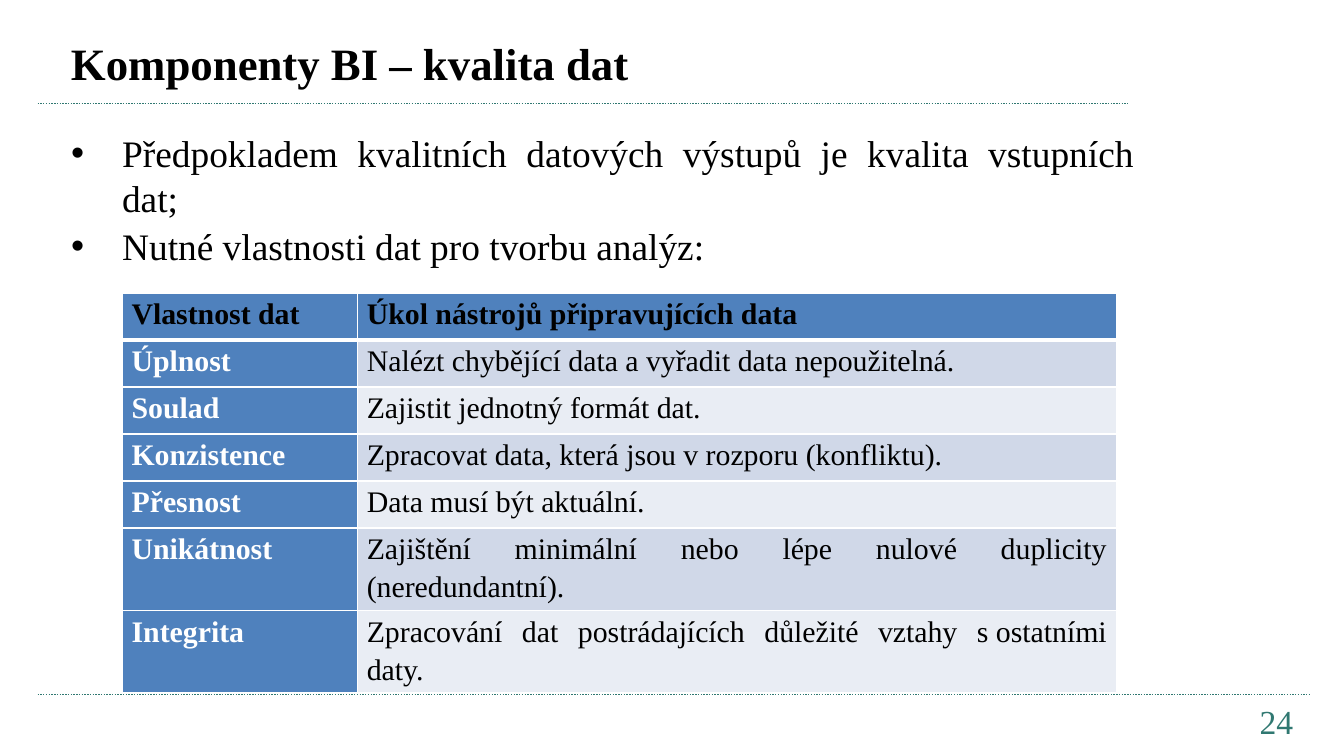
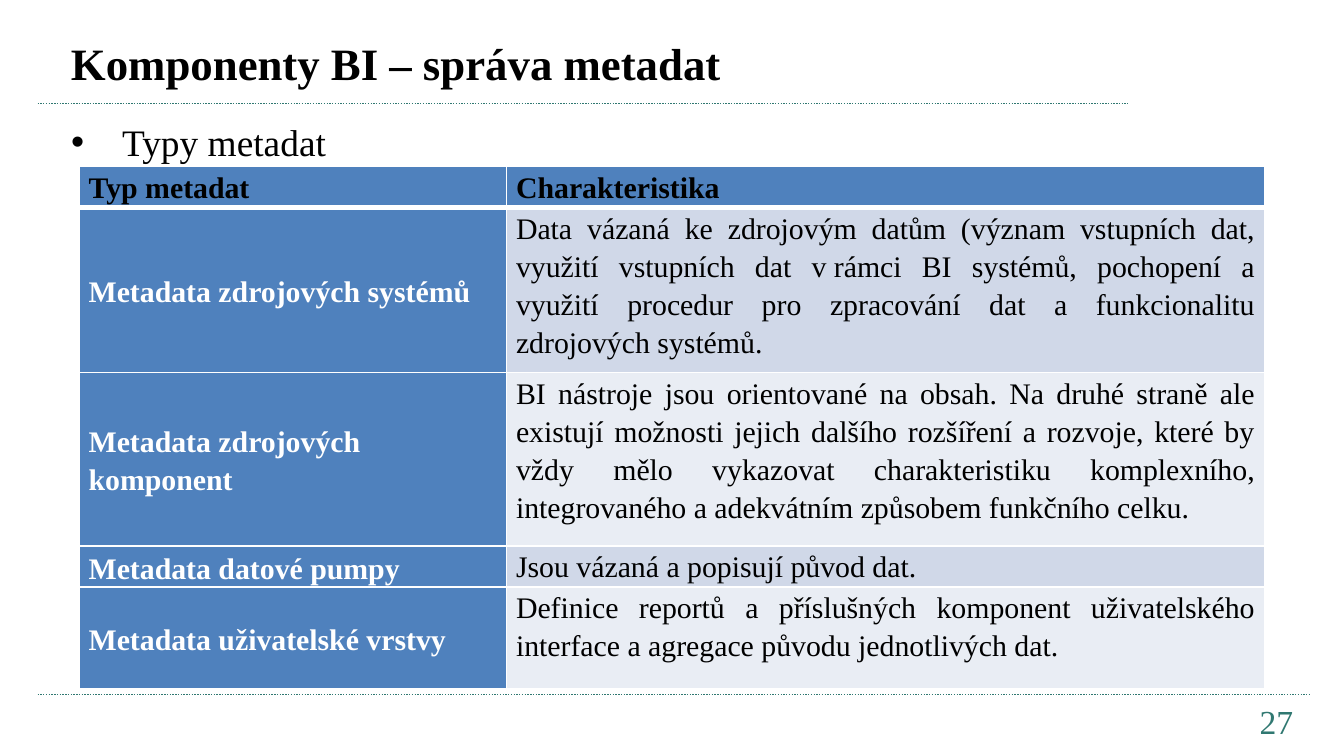
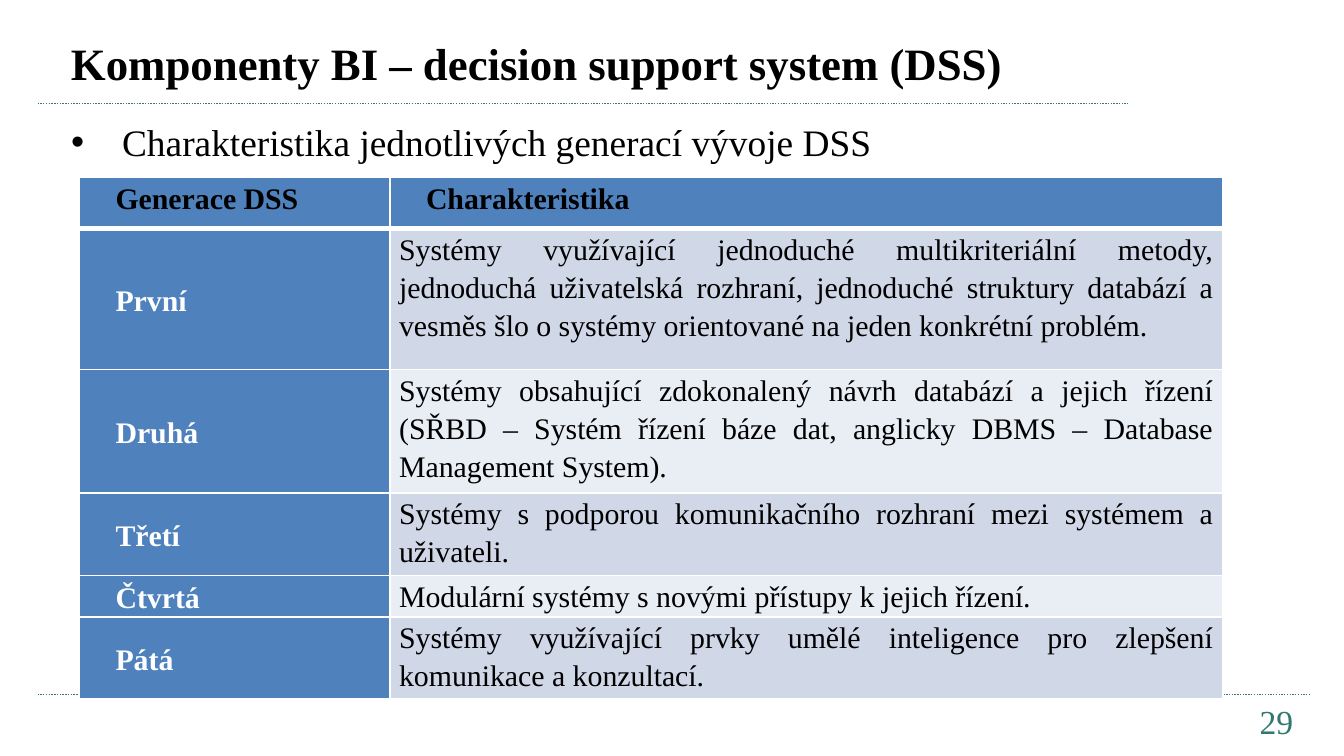
"""Build three slides on BI components, each with a heading, bullets and a table."""
from lxml import etree
from pptx import Presentation
from pptx import util as u
from pptx.dml.color import RGBColor
from pptx.enum import dml, shapes, text
from pptx.oxml.ns import qn

WIDTH = 10
HEIGHT = WIDTH * 9 / 16
FONT = "Times New Roman"
TIE, HARD_SPACE = "~", chr(160)
COLORS = {
    "ink": "000000",
    "white": "FFFFFF",
    "accent": "307871",
    "blue": "4F81BD",
    "band_dark": "D0D8E8",
    "band_light": "E9EDF4",
}
LEFT, TITLE_TOP, RULE_TOP, RULE_BOTTOM = 0.43, 0.21, 0.77, 5.17
RULES = [(0.28, 8.39, RULE_TOP), (0.28, 9.75, RULE_BOTTOM)]
BULLET_INDENT, KEY_INDENT = 0.38, 0.2
ALIGN, ANCHOR = text.PP_ALIGN, text.MSO_ANCHOR

SLIDES = [
    {
        "title": "Komponenty BI – kvalita dat",
        "number": "24",
        "bullets": [
            "Předpokladem kvalitních datových výstupů je kvalita vstupních dat;",
            "Nutné vlastnosti dat pro tvorbu analýz:",
        ],
        "bullet_box": (0.92, 3.86),
        "corner": (0.91, 2.18),
        "columns": [1.75, 5.65],
        "heights": [0.35] * 7,
        "total_height": 2.92,
        "rows": [
            ("Vlastnost dat", "Úkol nástrojů připravujících data"),
            ("Úplnost", "Nalézt chybějící data a vyřadit data nepoužitelná."),
            ("Soulad", "Zajistit jednotný formát dat."),
            ("Konzistence", "Zpracovat data, která jsou v~rozporu (konfliktu)."),
            ("Přesnost", "Data musí být aktuální."),
            ("Unikátnost", "Zajištění minimální nebo lépe nulové duplicity (neredundantní)."),
            ("Integrita", "Zpracování dat postrádajících důležité vztahy s~ostatními daty."),
        ],
        "key_align": ALIGN.JUSTIFY,
        "key_anchor": ANCHOR.TOP,
        "key_indent": 0,
        "space_after": 0,
    },
    {
        "title": "Komponenty BI – správa metadat",
        "number": "27",
        "bullets": ["Typy metadat"],
        "bullet_box": (0.84, 0.47),
        "corner": (0.59, 1.24),
        "columns": [3.18, 5.64],
        "heights": [0.24, 1.03, 1.29, 0.24, 0.76],
        "total_height": 3.89,
        "rows": [
            ("Typ metadat", "Charakteristika"),
            ("Metadata zdrojových systémů",
             "Data vázaná ke zdrojovým datům (význam vstupních dat, využití vstupních dat "
             "v~rámci BI systémů, pochopení a využití procedur pro zpracování dat a "
             "funkcionalitu zdrojových systémů. "),
            ("Metadata zdrojových komponent",
             "BI nástroje jsou orientované na obsah. Na druhé straně ale existují možnosti "
             "jejich dalšího rozšíření a rozvoje, které by vždy mělo vykazovat charakteristiku "
             "komplexního, integrovaného a adekvátním způsobem funkčního celku."),
            ("Metadata datové pumpy", "Jsou vázaná a popisují původ dat."),
            ("Metadata uživatelské vrstvy",
             "Definice reportů a příslušných komponent uživatelského interface a agregace "
             "původu jednotlivých dat."),
        ],
        "key_align": ALIGN.LEFT,
        "key_anchor": ANCHOR.MIDDLE,
        "key_indent": 0,
        "space_after": 0,
    },
    {
        "title": "Komponenty BI – decision support system (DSS)",
        "number": "29",
        "bullets": ["Charakteristika jednotlivých generací vývoje DSS"],
        "bullet_box": (0.84, 0.47),
        "corner": (0.59, 1.32),
        "columns": [2.31, 6.2],
        "heights": [0.38, 1.05, 0.88, 0.59, 0.29, 0.59],
        "total_height": 3.8,
        "rows": [
            ("Generace DSS", "Charakteristika"),
            ("První",
             "Systémy využívající jednoduché multikriteriální metody, jednoduchá uživatelská "
             "rozhraní, jednoduché struktury databází a vesměs šlo o~systémy orientované na "
             "jeden konkrétní problém."),
            ("Druhá",
             "Systémy obsahující zdokonalený návrh databází a jejich řízení (SŘBD – Systém "
             "řízení báze dat, anglicky DBMS – Database Management System)."),
            ("Třetí", "Systémy s podporou komunikačního rozhraní mezi systémem a uživateli."),
            ("Čtvrtá", "Modulární systémy s~novými přístupy k~jejich řízení."),
            ("Pátá",
             "Systémy využívající prvky umělé inteligence pro zlepšení komunikace a konzultací."),
        ],
        "key_align": ALIGN.LEFT,
        "key_anchor": ANCHOR.MIDDLE,
        "key_indent": KEY_INDENT,
        "space_after": 6,
    },
]


def rgb(name):
    return RGBColor.from_string(COLORS[name])


def write(paragraph, words, size, color="ink", bold=False, align=ALIGN.LEFT):
    paragraph.alignment = align
    run = paragraph.add_run()
    run.text = words.replace(TIE, HARD_SPACE)
    run.font.name, run.font.size, run.font.bold = FONT, u.Pt(size), bold
    run.font.color.rgb = rgb(color)
    ending = etree.SubElement(paragraph._p, qn("a:endParaRPr"), sz=str(size * 100))
    etree.SubElement(ending, qn("a:latin"), typeface=FONT)


def indent(paragraph, margin, first):
    properties = paragraph._p.get_or_add_pPr()
    properties.set("marL", str(u.Inches(margin)))
    properties.set("indent", str(u.Inches(first)))
    return properties


def add_frame(slide, left, top, width, height, anchor=ANCHOR.TOP):
    box = slide.shapes.add_textbox(*map(u.Inches, (left, top, width, height)))
    frame = box.text_frame
    frame.word_wrap, frame.vertical_anchor = True, anchor
    return frame


def add_rule(slide, start, end, y):
    rule = slide.shapes.add_connector(
        shapes.MSO_CONNECTOR.STRAIGHT, *map(u.Inches, (start, y, end, y)))
    rule.line.color.rgb = rgb("accent")
    rule.line.width = u.Pt(0.75)
    rule.line.dash_style = dml.MSO_LINE.ROUND_DOT
    etree.SubElement(rule._element.spPr, qn("a:effectLst"))


def add_title(slide, words):
    frame = add_frame(slide, LEFT, TITLE_TOP, 8.9, RULE_TOP - TITLE_TOP, ANCHOR.MIDDLE)
    frame.paragraphs[0].line_spacing = 0.9
    write(frame.paragraphs[0], words, 24, bold=True)


def add_bullets(slide, bullets, top, height):
    frame = add_frame(slide, LEFT, top, 8.11, height)
    for index, words in enumerate(bullets):
        paragraph = frame.add_paragraph() if index else frame.paragraphs[0]
        properties = indent(paragraph, BULLET_INDENT, -BULLET_INDENT)
        etree.SubElement(properties, qn("a:buFont"), typeface="Arial")
        etree.SubElement(properties, qn("a:buChar"), char="•")
        if index:
            paragraph.space_before = u.Pt(2)
        write(paragraph, words, 20, align=ALIGN.JUSTIFY)


def set_borders(cell, row):
    widths = {"L": 1, "R": 1, "T": 3 if row == 1 else 1, "B": 1 if row else 3}
    properties = cell._tc.get_or_add_tcPr()
    for place, (side, width) in enumerate(widths.items()):
        edge = etree.Element(qn(f"a:ln{side}"), w=str(u.Pt(width)))
        fill = etree.SubElement(edge, qn("a:solidFill"))
        etree.SubElement(fill, qn("a:srgbClr"), val=COLORS["white"])
        properties.insert(place, edge)


def fill_cell(cell, words, row, is_key, content):
    header = row == 0
    strong = header or is_key
    cell.fill.solid()
    band = "band_dark" if row % 2 else "band_light"
    cell.fill.fore_color.rgb = rgb("blue" if strong else band)
    set_borders(cell, row)
    cell.margin_left = cell.margin_right = u.Inches(0.07)
    cell.margin_top = cell.margin_bottom = 0
    row_key = is_key and not header
    cell.vertical_anchor = content["key_anchor"] if row_key else ANCHOR.TOP
    paragraph = cell.text_frame.paragraphs[0]
    if strong:
        indent(paragraph, 0, content["key_indent"])
    paragraph.line_spacing = 1.15
    paragraph.space_after = u.Pt(content["space_after"])
    write(paragraph, words, 16, "white" if row_key else "ink", strong,
          content["key_align"] if row_key else ALIGN.JUSTIFY)


def add_grid(slide, content):
    rows, columns, heights = content["rows"], content["columns"], content["heights"]
    size = (sum(columns), content["total_height"])
    grid = slide.shapes.add_table(
        len(rows), len(columns), *map(u.Inches, content["corner"] + size))
    for column, width in zip(grid.table.columns, columns):
        column.width = u.Inches(width)
    for line, height in zip(grid.table.rows, heights):
        line.height = u.Inches(height)
    grid.height = u.Inches(content["total_height"])
    for row, entry in enumerate(rows):
        for column, words in enumerate(entry):
            fill_cell(grid.table.cell(row, column), words, row, column == 0, content)


def build_slide(deck, content):
    slide = deck.slides.add_slide(deck.slide_layouts[6])
    for rule in RULES:
        add_rule(slide, *rule)
    number = add_frame(slide, 8.54, RULE_BOTTOM, 1.18, 0.3)
    write(number.paragraphs[0], content["number"], 18, "accent", align=ALIGN.RIGHT)
    add_title(slide, content["title"])
    add_bullets(slide, content["bullets"], *content["bullet_box"])
    add_grid(slide, content)


def main():
    deck = Presentation()
    deck.slide_width, deck.slide_height = u.Inches(WIDTH), u.Inches(HEIGHT)
    for content in SLIDES:
        build_slide(deck, content)
    deck.save("out.pptx")


if __name__ == "__main__":
    main()
